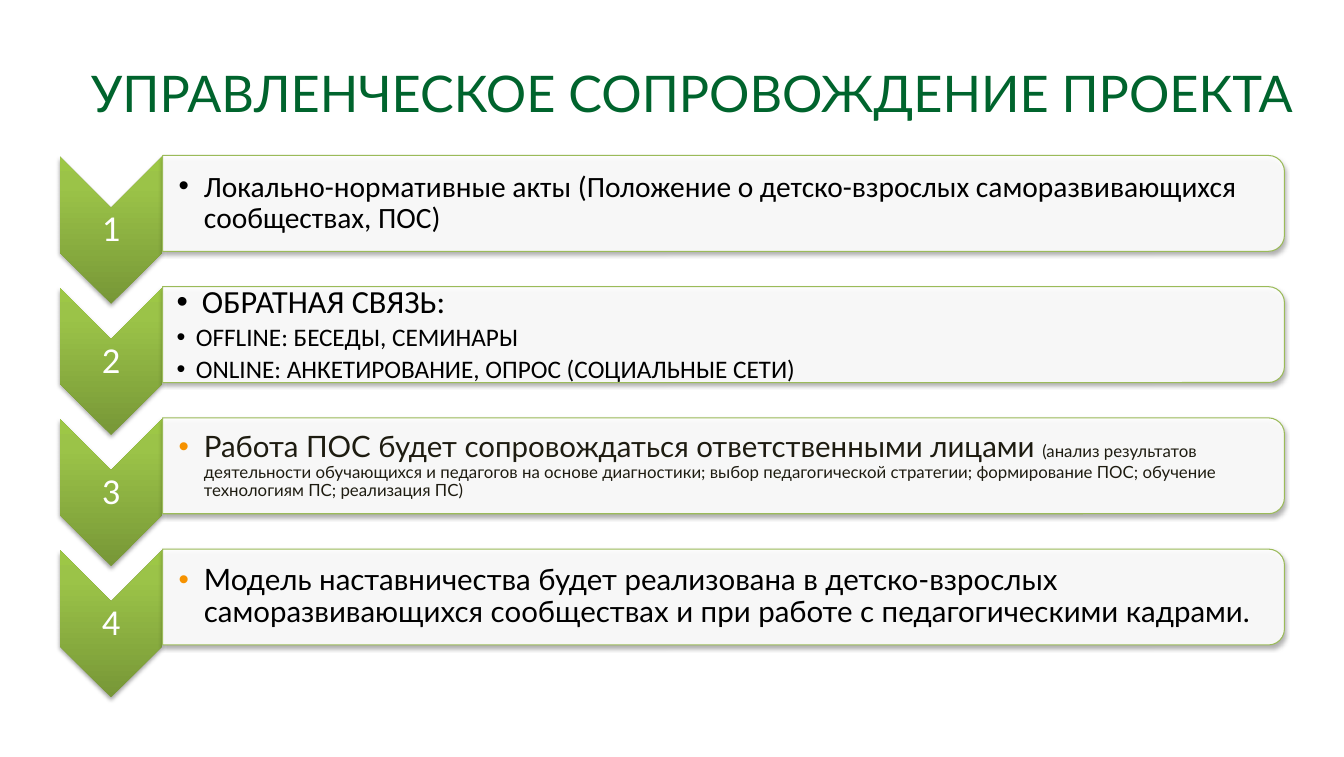
import pptx
import pptx.dml.color
import pptx.enum.shapes
import pptx.enum.text
import pptx.oxml
import pptx.oxml.ns
import pptx.util

Inches = pptx.util.Inches
Pt = pptx.util.Pt
RGBColor = pptx.dml.color.RGBColor
MSO_SHAPE = pptx.enum.shapes.MSO_SHAPE
MSO_ANCHOR = pptx.enum.text.MSO_ANCHOR
PP_ALIGN = pptx.enum.text.PP_ALIGN

TITLE_GREEN = RGBColor(0x00, 0x64, 0x2D)
DARK_GREEN = RGBColor(0x77, 0x97, 0x37)
MIDDLE_GREEN = RGBColor(0x9B, 0xC3, 0x48)
LIGHT_GREEN = RGBColor(0x9D, 0xC7, 0x46)
BORDER_GREEN = RGBColor(0x9B, 0xBB, 0x59)
ORANGE = RGBColor(0xF6, 0x92, 0x00)
BROWN = RGBColor(0x1E, 0x1C, 0x11)
BLACK = RGBColor(0x00, 0x00, 0x00)
WHITE = RGBColor(0xFF, 0xFF, 0xFF)

ROW_STEP = 1.3
CHEVRON_STOPS = [(0, DARK_GREEN), (80, MIDDLE_GREEN), (100, LIGHT_GREEN)]

# Each item: indent, bullet colour, font, text colour, runs of (text, size)
ROWS = [
    (0.16, [
        (0.25, BLACK, "Calibri", BLACK, [
            ("Локально-нормативные акты (Положение о детско-взрослых "
             "саморазвивающихся сообществах, ПОС)", 21)]),
    ]),
    (0.14, [
        (0.25, BLACK, "Calibri", BLACK, [("ОБРАТНАЯ СВЯЗЬ:", 23)]),
        (0.19, BLACK, "Calibri", BLACK, [("OFFLINE: БЕСЕДЫ, СЕМИНАРЫ", 18)]),
        (0.19, BLACK, "Calibri", BLACK, [
            ("ONLINE: АНКЕТИРОВАНИЕ, ОПРОС (СОЦИАЛЬНЫЕ СЕТИ)", 18)]),
    ]),
    (0.16, [
        (0.25, ORANGE, "Lato", BROWN, [
            ("Работа ПОС будет сопровождаться ответственными лицами ", 21),
            ("(анализ результатов деятельности обучающихся и педагогов на "
             "основе диагностики; выбор педагогической стратегии; "
             "формирование ПОС; обучение технологиям ПС; реализация ПС)", 12)]),
    ]),
    (0.16, [
        (0.25, ORANGE, "Lato", BLACK, [
            ("Модель наставничества будет реализована в детско-взрослых "
             "саморазвивающихся сообществах и при работе с "
             "педагогическими кадрами.", 21)]),
    ]),
]


def parse_drawing(markup):
    namespace = pptx.oxml.ns.nsdecls("a")
    return pptx.oxml.parse_xml(markup.replace(" ", f" {namespace} ", 1))


def add_turned_shape(shapes, kind, left, top, width, height):
    shape = shapes.add_shape(
        kind,
        Inches(left + (width - height) / 2), Inches(top + (height - width) / 2),
        Inches(height), Inches(width))
    shape.rotation = 90
    shape.shadow.inherit = False
    effects = shape._element.spPr.find(pptx.oxml.ns.qn("a:effectLst"))
    effects.append(parse_drawing(
        '<a:outerShdw blurRad="40000" dist="23000" dir="5400000" rotWithShape="0">'
        '<a:srgbClr val="000000"><a:alpha val="35000"/></a:srgbClr></a:outerShdw>'))
    return shape


def add_chevron(shapes, top):
    chevron = add_turned_shape(shapes, MSO_SHAPE.CHEVRON, 0.59, top, 1.02, 1.46)
    chevron.line.fill.background()
    chevron.fill.gradient()
    gradient = chevron._element.spPr.find(pptx.oxml.ns.qn("a:gradFill"))
    stops = "".join(
        f'<a:gs pos="{position * 1000}"><a:srgbClr val="{color}"/></a:gs>'
        for position, color in CHEVRON_STOPS)
    gradient.getparent().replace(gradient, parse_drawing(
        f'<a:gradFill rotWithShape="0"><a:gsLst>{stops}</a:gsLst>'
        '<a:lin ang="16200000" scaled="0"/></a:gradFill>'))


def add_card(shapes, top):
    card = add_turned_shape(
        shapes, MSO_SHAPE.ROUND_2_SAME_RECTANGLE, 1.61, top, 11.11, 0.95)
    card.fill.solid()
    card.fill.fore_color.rgb = WHITE
    color = card._element.spPr.find(".//" + pptx.oxml.ns.qn("a:srgbClr"))
    color.append(parse_drawing('<a:alpha val="90000"/>'))
    card.line.color.rgb = BORDER_GREEN
    card.line.width = Pt(0.75)


def add_text_frame(shapes, left, top, width, height, margins, anchor):
    box = shapes.add_textbox(
        Inches(left), Inches(top), Inches(width), Inches(height))
    frame = box.text_frame
    frame.word_wrap = True
    frame.vertical_anchor = anchor
    (frame.margin_left, frame.margin_top,
     frame.margin_right, frame.margin_bottom) = map(Inches, margins)
    return frame


def add_run(paragraph, text, size, font, color):
    run = paragraph.add_run()
    run.text = text
    run.font.size = Pt(size)
    run.font.name = font
    run.font.color.rgb = color


def add_centered_text(shapes, bounds, margin, anchor, text, size, font, color):
    frame = add_text_frame(shapes, *bounds, [margin] * 4, anchor)
    paragraph = frame.paragraphs[0]
    paragraph.alignment = PP_ALIGN.CENTER
    paragraph.line_spacing = 0.9
    add_run(paragraph, text, size, font, color)


def add_bullet(paragraph, indent, color):
    properties = paragraph._p.get_or_add_pPr()
    properties.set("marL", str(Inches(indent)))
    properties.set("indent", str(-Inches(indent)))
    properties.append(parse_drawing(
        f'<a:buClr ><a:srgbClr val="{color}"/></a:buClr>'))
    properties.append(parse_drawing('<a:buFont typeface="Arial"/>'))
    properties.append(parse_drawing('<a:buChar char="•"/>'))


def add_bullet_list(shapes, top, margin_left, items):
    frame = add_text_frame(
        shapes, 1.61, top, 11.06, 0.85,
        [margin_left, 0.01, 0.01, 0.01], MSO_ANCHOR.MIDDLE)
    for index, (indent, bullet_color, font, color, runs) in enumerate(items):
        paragraph = frame.add_paragraph() if index else frame.paragraphs[0]
        paragraph.level = 1
        paragraph.line_spacing = 0.9
        paragraph.space_after = Pt(3)
        add_bullet(paragraph, indent, bullet_color)
        for text, size in runs:
            add_run(paragraph, text, size, font, color)


def main():
    presentation = pptx.Presentation()
    presentation.slide_width = Inches(13.31)
    presentation.slide_height = Inches(7.5)
    slide = presentation.slides.add_slide(presentation.slide_layouts[6])
    add_centered_text(
        slide.shapes, (0.2, 0.68, 13.31, 0.55), 0, MSO_ANCHOR.TOP,
        "УПРАВЛЕНЧЕСКОЕ СОПРОВОЖДЕНИЕ ПРОЕКТА", 36, "Lato", TITLE_GREEN)
    shapes = slide.shapes.add_group_shape().shapes
    for index, (margin_left, items) in enumerate(ROWS):
        offset = index * ROW_STEP
        add_chevron(shapes, 1.55 + offset)
        add_centered_text(
            shapes, (0.59, 2.06 + offset, 1.02, 0.44), 0.02, MSO_ANCHOR.MIDDLE,
            str(index + 1), 26, "Calibri", WHITE)
        add_card(shapes, 1.54 + offset)
        add_bullet_list(shapes, 1.59 + offset, margin_left, items)
    presentation.save("out.pptx")


if __name__ == "__main__":
    main()
